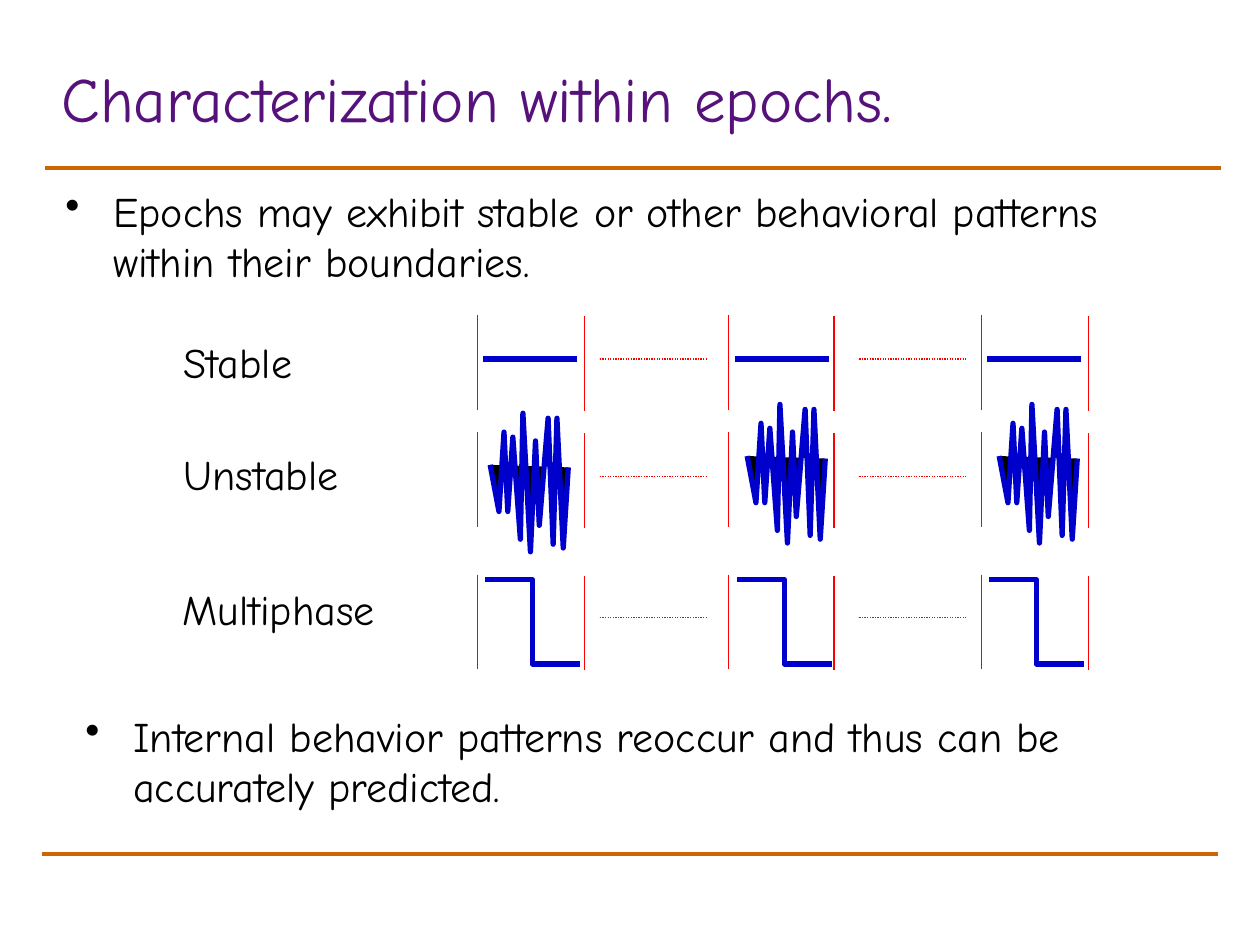
from dataclasses import dataclass

from lxml import etree
from pptx import Presentation
from pptx.dml.color import RGBColor
from pptx.enum.dml import MSO_LINE
from pptx.enum.shapes import MSO_CONNECTOR
from pptx.enum.text import MSO_ANCHOR
from pptx.oxml.ns import qn
from pptx.util import Emu, Pt

PX = 9144  # 100 px to the inch
STRAIGHT, ELBOW = MSO_CONNECTOR.STRAIGHT, MSO_CONNECTOR.ELBOW
DOTTED = MSO_LINE.ROUND_DOT
TOP, MIDDLE = MSO_ANCHOR.TOP, MSO_ANCHOR.MIDDLE
FONT = "Comic Neue"
COLORS = {
    "rule": "CC6600",
    "title": "56127A",
    "text": "000000",
    "signal": "0000CC",
    "boundary": "FF0000",
}
INDENT = 38


@dataclass(frozen=True)
class Label:
    text: str
    left: int
    top: int
    width: int
    height: int
    bullet: bool = False


@dataclass(frozen=True)
class Epoch:
    start: int
    end: int
    signal_left: int
    wave_left: int
    wave_top: int


@dataclass(frozen=True)
class Row:
    pattern: str
    top: int
    gap_y: int


LABELS = [
    Label("Epochs may exhibit stable or other behavioral patterns within their boundaries.",
          42, 142, 925, 116, True),
    Label("Internal behavior patterns reoccur and thus can be accurately predicted.",
          58, 559, 925, 116, True),
    Label("Stable", 136, 262, 125, 58),
    Label("Unstable", 136, 351, 164, 58),
    Label("Multiphase", 135, 458, 190, 58),
]
EPOCHS = [
    Epoch(379, 464, 383, 389, 328),
    Epoch(578, 662, 583, 593, 321),
    Epoch(779, 864, 783, 793, 321),
]
ROWS = [Row("stable", 250, 285), Row("multiphase", 456, 490), Row("unstable", 343, 378)]
GAPS = [(561, 475), (767, 681)]
BOUNDARY_HEIGHT = 75
SIGNAL_WIDTH = 75
STEP_HEIGHT = 67
# Offsets of the unstable wave from its left and top
WAVE = [(0, 41), (7, 78), (11, 15), (14, 78), (18, 19), (24, 100), (26, 0), (32, 110),
        (36, 22), (39, 89), (46, 4), (50, 104), (53, 4), (58, 107), (62, 43)]


def px(value: int) -> Emu:
    return Emu(value * PX)


def color(name: str) -> RGBColor:
    return RGBColor.from_string(COLORS[name])


def draw_line(page, start: tuple[int, int], end: tuple[int, int], color_name: str,
              points: float, kind=STRAIGHT, dash=None) -> None:
    line = page.shapes.add_connector(kind, *map(px, (*start, *end)))
    line.line.color.rgb = color(color_name)
    line.line.width = Pt(points)
    if dash is not None:
        line.line.dash_style = dash
    etree.SubElement(line._element.spPr, qn("a:effectLst"))


def draw_wave(page, left: int, top: int) -> None:
    points = [(left + x, top + y) for x, y in WAVE]
    builder = page.shapes.build_freeform(*points[0], scale=PX)
    builder.add_line_segments(points[1:], close=False)
    wave = builder.convert_to_shape()
    wave.shadow.inherit = False
    wave.fill.solid()
    wave.fill.fore_color.rgb = color("text")
    wave.line.color.rgb = color("signal")
    wave.line.width = Pt(3)


def draw_signal(page, row: Row, epoch: Epoch) -> None:
    left = epoch.signal_left
    if row.pattern == "stable":
        draw_line(page, (left, row.gap_y), (left + SIGNAL_WIDTH, row.gap_y), "signal", 3)
    elif row.pattern == "multiphase":
        left, top = left + 2, row.top + 4
        draw_line(page, (left, top), (left + SIGNAL_WIDTH, top + STEP_HEIGHT),
                  "signal", 3, ELBOW)
    else:
        draw_wave(page, epoch.wave_left, epoch.wave_top)


def draw_row(page, row: Row) -> None:
    for epoch in EPOCHS:
        draw_signal(page, row, epoch)
        for x, top in ((epoch.start, row.top), (epoch.end, row.top + 1)):
            draw_line(page, (x, top), (x, top + BOUNDARY_HEIGHT), "boundary", 0.75)
    for right, left in GAPS:
        draw_line(page, (right, row.gap_y), (left, row.gap_y), "boundary", 0.75, dash=DOTTED)


def draw_text(page, label: Label, size: int, color_name: str, anchor=TOP):
    box = page.shapes.add_textbox(*map(px, (label.left, label.top, label.width, label.height)))
    frame = box.text_frame
    frame.word_wrap = True
    frame.vertical_anchor = anchor
    frame.text = label.text
    para = frame.paragraphs[0]
    for span in para.runs:
        span.font.name = FONT
        span.font.size = Pt(size)
        span.font.color.rgb = color(color_name)
    return para


def draw_label(page, label: Label) -> None:
    para = draw_text(page, label, 24, "text")
    para.space_before = Pt(4.8)
    properties = para._p.get_or_add_pPr()
    properties.set("marL", str(px(INDENT)))
    properties.set("indent", str(px(-INDENT)))
    if label.bullet:
        etree.SubElement(properties, qn("a:buChar")).set("char", "•")
    else:
        etree.SubElement(properties, qn("a:buNone"))


def main() -> None:
    deck = Presentation()
    deck.slide_width, deck.slide_height = px(1000), px(750)
    page = deck.slides.add_slide(deck.slide_layouts[6])

    # Rules and title
    draw_line(page, (36, 133), (969, 133), "rule", 2.25)
    draw_line(page, (33, 678), (967, 678), "rule", 2.25)
    title = Label("Characterization within epochs.", 39, 37, 920, 91)
    draw_text(page, title, 36, "title", MIDDLE).line_spacing = 0.8

    # Epoch diagram
    for row in ROWS:
        draw_row(page, row)

    # Bullets and row names
    for label in LABELS:
        draw_label(page, label)

    deck.save("out.pptx")


if __name__ == "__main__":
    main()
